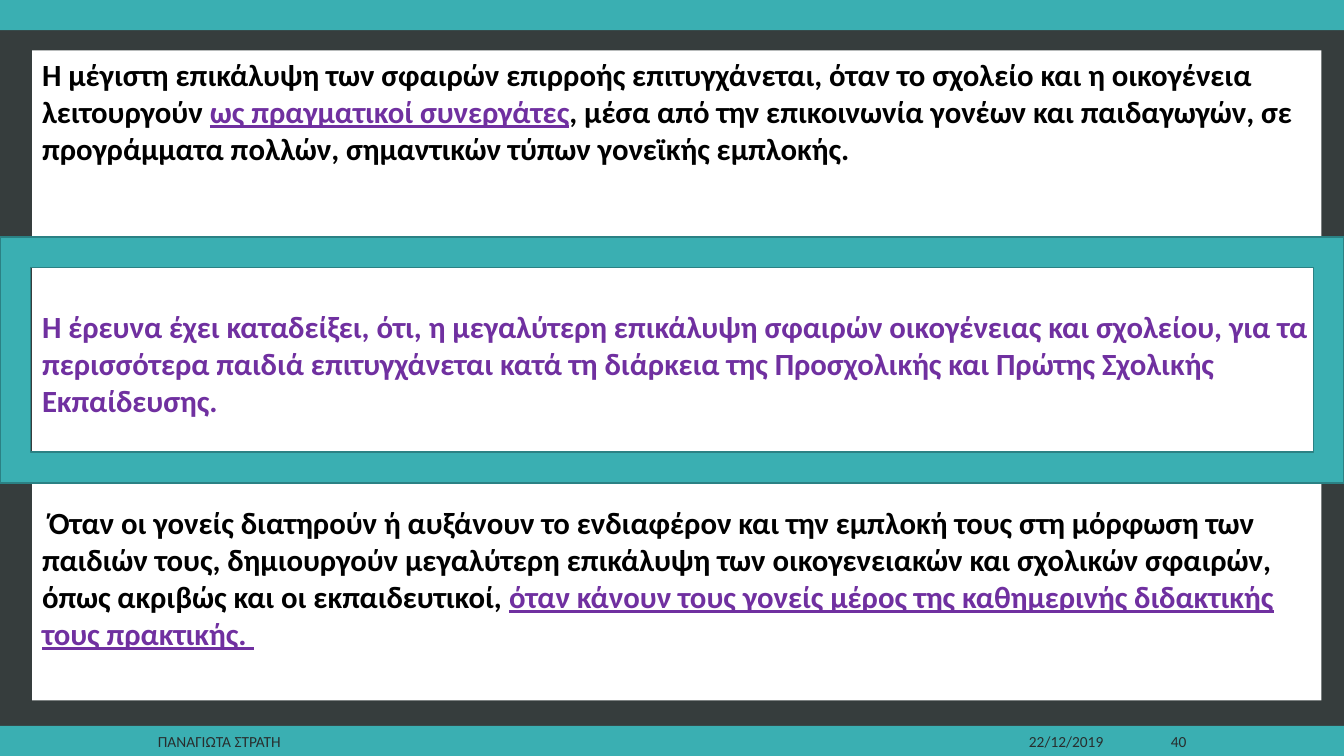
import pptx
import pptx.util
from pptx.dml.color import RGBColor
from pptx.enum.shapes import MSO_SHAPE
from pptx.enum.text import MSO_ANCHOR, PP_ALIGN
from pptx.util import Cm, Pt

TEAL, TEAL_DARK, BLACK, PURPLE = "3AAFB2", "2B8184", "000000", "7030A0"


def rgb(value):
    return RGBColor.from_string(value)


def add_filled(kind, left, top, width, height, fill):
    sp = s.shapes.add_shape(kind, Cm(left), Cm(top), Cm(width), Cm(height))
    sp.shadow.inherit = False
    sp.fill.solid()
    sp.fill.fore_color.rgb = rgb(fill)
    sp.line.fill.background()
    return sp


prs = pptx.Presentation()
prs.slide_width, prs.slide_height = Cm(33.87), Cm(19.05)
s = prs.slides.add_slide(prs.slide_layouts[6])
s.background.fill.solid()
s.background.fill.fore_color.rgb = rgb("363D3D")

# Bands along the top and bottom edges
for top in (18.29, 0):
    add_filled(MSO_SHAPE.RECTANGLE, 0, top, 33.87, 0.76, TEAL)

# Footer: author, date, slide number
footers = [
    ("ΠΑΝΑΓΙΩΤΑ ΣΤΡΑΤΗ", 3.73, 19.89, PP_ALIGN.LEFT),
    ("22/12/2019", 23.95, 4.11, PP_ALIGN.RIGHT),
    ("40", 28.37, 1.78, PP_ALIGN.RIGHT),
]
for text, left, width, align in footers:
    tf = s.shapes.add_textbox(Cm(left), Cm(18.34), Cm(width), Cm(0.66)).text_frame
    tf.word_wrap = True
    tf.vertical_anchor = MSO_ANCHOR.MIDDLE
    p = tf.paragraphs[0]
    p.text = text
    p.alignment = align
    p.font.name, p.font.size = "Calibri", Pt(11)
    p.font.color.rgb = rgb("282E2E")

# White panel: space before each paragraph, then (text, colour, underlined) runs
paragraphs = [
    (0, [
        ("Η μέγιστη επικάλυψη των σφαιρών επιρροής επιτυγχάνεται, όταν το σχολείο "
         "και η οικογένεια λειτουργούν ", BLACK, False),
        ("ως πραγματικοί συνεργάτες", PURPLE, True),
        (", μέσα από την επικοινωνία γονέων και παιδαγωγών, σε προγράμματα πολλών, "
         "σημαντικών τύπων γονεϊκής εμπλοκής.", BLACK, False),
    ]),
    (101, [
        ("Η έρευνα έχει καταδείξει, ότι, η μεγαλύτερη επικάλυψη σφαιρών οικογένειας "
         "και σχολείου, για τα περισσότερα παιδιά επιτυγχάνεται κατά τη διάρκεια της "
         "Προσχολικής και Πρώτης Σχολικής Εκπαίδευσης.", PURPLE, False),
    ]),
    (61, [
        (" Όταν οι γονείς διατηρούν ή αυξάνουν το ενδιαφέρον και την εμπλοκή τους "
         "στη μόρφωση των παιδιών τους, δημιουργούν μεγαλύτερη επικάλυψη των "
         "οικογενειακών και σχολικών σφαιρών, όπως ακριβώς και οι εκπαιδευτικοί, ",
         BLACK, False),
        ("όταν κάνουν τους γονείς μέρος της καθημερινής διδακτικής τους πρακτικής. ",
         PURPLE, True),
    ]),
]
panel = add_filled(MSO_SHAPE.RECTANGLE, 0.81, 1.27, 32.49, 16.38, "FFFFFF")
tf = panel.text_frame
tf.word_wrap = True
tf.vertical_anchor = MSO_ANCHOR.TOP
for i, (space, runs) in enumerate(paragraphs):
    p = tf.add_paragraph() if i else tf.paragraphs[0]
    p.alignment = PP_ALIGN.LEFT
    p.space_before = Pt(space)
    p.font.name, p.font.size, p.font.bold = "Calibri", Pt(22), True
    for text, colour, underlined in runs:
        r = p.add_run()
        r.text = text
        r.font.color.rgb = rgb(colour)
        r.font.underline = underlined

# Frame around the middle paragraph
frame = add_filled(MSO_SHAPE.FRAME, 0, 5.97, 33.87, 6.2, TEAL)
frame.line.color.rgb = rgb(TEAL_DARK)
frame.line.width = Pt(1)

prs.save("out.pptx")
